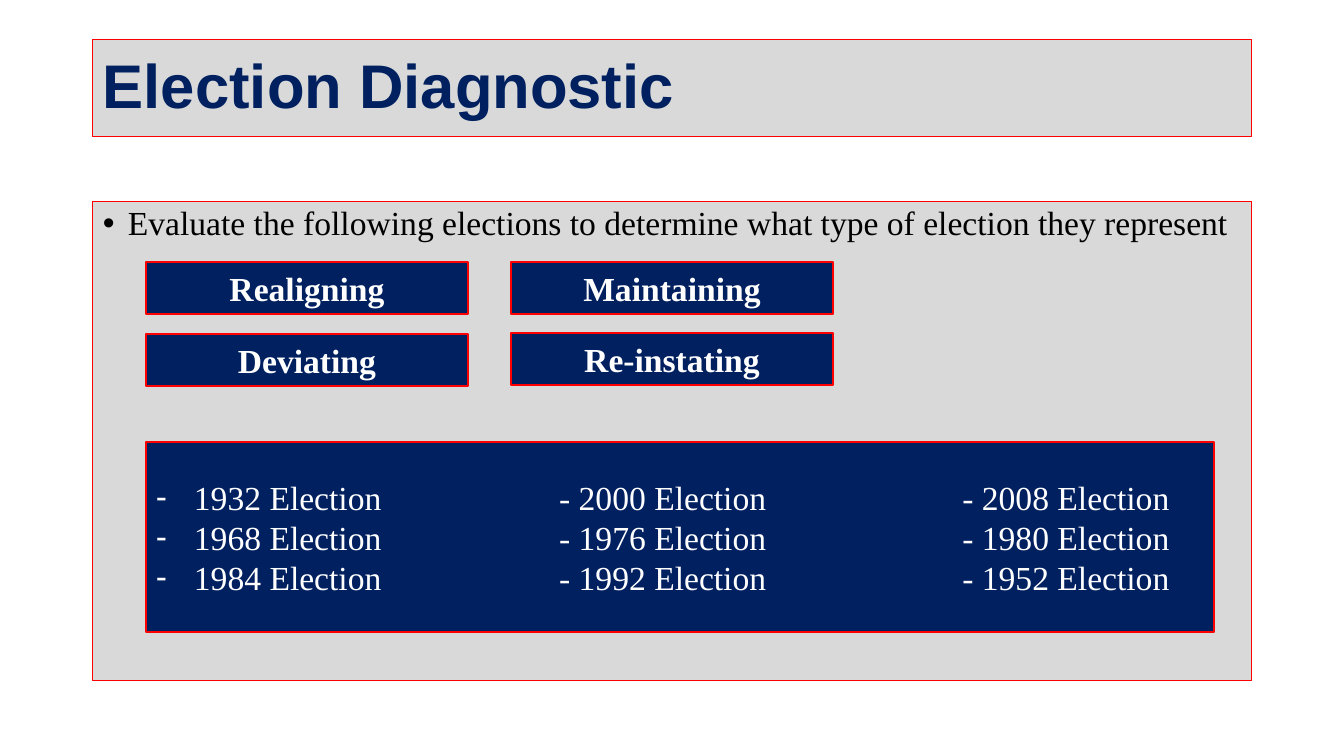
import pptx
import pptx.util
import pptx.dml.color
import pptx.enum.shapes
import pptx.enum.text
import lxml.etree
from dataclasses import dataclass


@dataclass(frozen=True)
class Theme:
    navy: str = "002060"
    grey: str = "D9D9D9"
    red: str = "FF0000"
    white: str = "FFFFFF"
    black: str = "000000"
    heading_font: str = "Arial"
    body_font: str = "Times New Roman"
    bullet_font: str = "Arial"
    title_size: int = 44
    text_size: int = 24


theme = Theme()
PX = 914400 / 100.8
ALIGN = pptx.enum.text.PP_ALIGN
ANCHOR = pptx.enum.text.MSO_ANCHOR

prs = pptx.Presentation()
prs.slide_width = round(1344 * PX)
prs.slide_height = round(756 * PX)
s = prs.slides.add_slide(prs.slide_layouts[6])


def add_panel(x, y, w, h, fill, line_width, anchor=ANCHOR.MIDDLE):
    sp = s.shapes.add_shape(
        pptx.enum.shapes.MSO_SHAPE.RECTANGLE, *[round(v * PX) for v in (x, y, w, h)]
    )
    sp.shadow.inherit = False
    sp.fill.solid()
    sp.fill.fore_color.rgb = pptx.dml.color.RGBColor.from_string(fill)
    sp.line.color.rgb = pptx.dml.color.RGBColor.from_string(theme.red)
    sp.line.width = pptx.util.Pt(line_width)
    tf = sp.text_frame
    tf.word_wrap = True
    tf.vertical_anchor = anchor
    return tf


def write(p, text, color, size=theme.text_size, font=theme.body_font,
          bold=False, align=ALIGN.LEFT, bullet=None, indent=0):
    p.alignment = align
    if bullet:
        pPr = p._p.get_or_add_pPr()
        pPr.set("marL", str(round(indent * PX)))
        pPr.set("indent", str(round(-indent * PX)))
        pPr.set("defTabSz", str(pptx.util.Inches(1)))
        for tag, key, value in (("a:buFont", "typeface", theme.bullet_font),
                                ("a:buChar", "char", bullet)):
            lxml.etree.SubElement(pPr, pptx.oxml.ns.qn(tag)).set(key, value)
    r = p.add_run()
    r.text = text
    r.font.name = font
    r.font.size = pptx.util.Pt(size)
    r.font.bold = bold
    r.font.color.rgb = pptx.dml.color.RGBColor.from_string(color)


tf = add_panel(93, 40, 1159, 97, theme.grey, 0.75)
p = tf.paragraphs[0]
write(p, "Election Diagnostic", theme.navy, theme.title_size, theme.heading_font, bold=True)
p.line_spacing = 0.9

tf = add_panel(93, 202, 1159, 479, theme.grey, 0.75, ANCHOR.TOP)
p = tf.paragraphs[0]
write(p, "Evaluate the following elections to determine what type of election they represent",
      theme.black, bullet="•", indent=25)
p.line_spacing = 0.9

election_types = [
    ("Realigning", 146, 262),
    ("Maintaining", 511, 262),
    ("Deviating", 146, 334),
    ("Re-instating", 511, 333),
]
for name, x, y in election_types:
    tf = add_panel(x, y, 322, 52, theme.navy, 1)
    write(tf.paragraphs[0], name, theme.white, bold=True, align=ALIGN.CENTER)

election_rows = [(1932, 2000, 2008), (1968, 1976, 1980), (1984, 1992, 1952)]
tf = add_panel(146, 442, 1068, 190, theme.navy, 1)
for i, years in enumerate(election_rows):
    p = tf.add_paragraph() if i else tf.paragraphs[0]
    text = "\t\t- ".join(f"{year} Election" for year in years)
    write(p, text, theme.white, bullet="-", indent=38)

prs.save("out.pptx")
